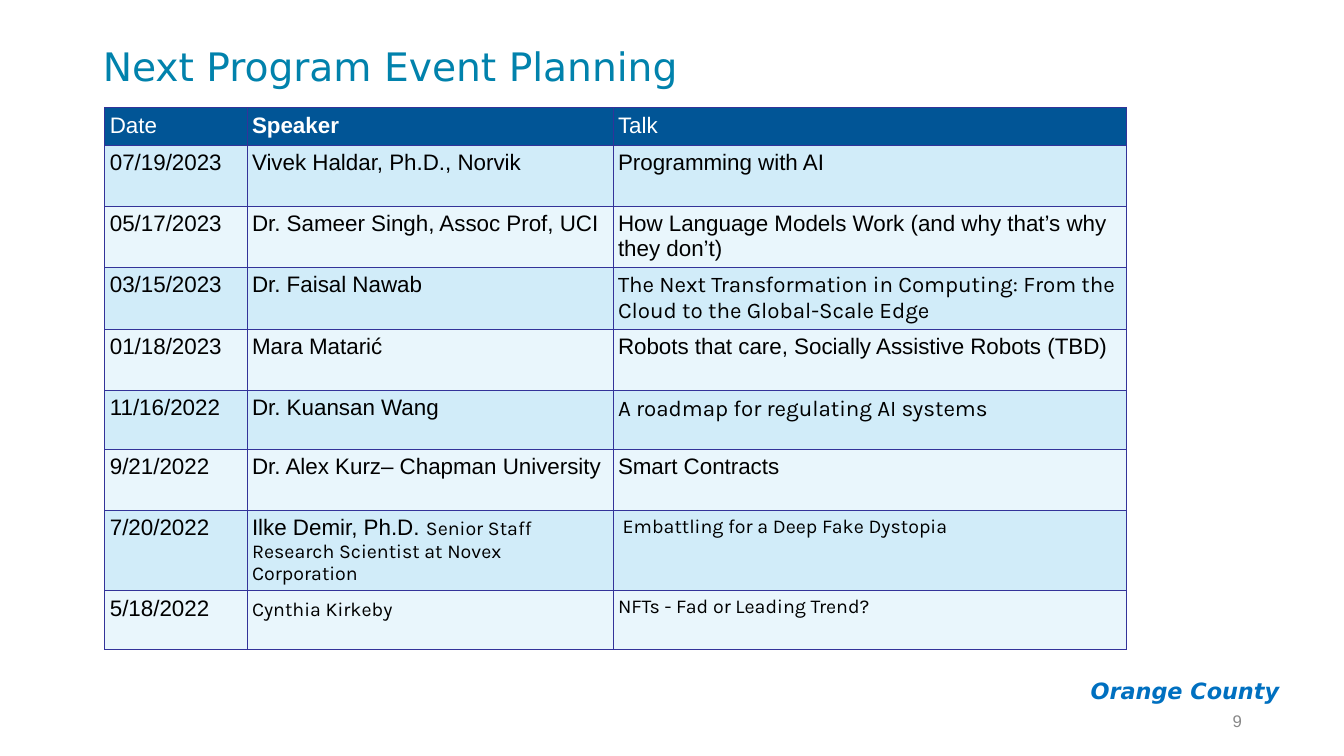
from lxml import etree
from pptx import Presentation
from pptx.dml.color import RGBColor
from pptx.enum.text import MSO_ANCHOR, MSO_AUTO_SIZE, PP_ALIGN
from pptx.oxml.ns import qn
from pptx.util import Inches, Pt

LEFT, RIGHT = PP_ALIGN.LEFT, PP_ALIGN.RIGHT
TOP, MIDDLE = MSO_ANCHOR.TOP, MSO_ANCHOR.MIDDLE
FIXED_SIZE = MSO_AUTO_SIZE.NONE
TITLE_ONLY = 5

TEAL = RGBColor(0x01, 0x82, 0xAC)
BLUE = RGBColor(0x00, 0x70, 0xC0)
NAVY = RGBColor(0x01, 0x55, 0x96)
BORDER = RGBColor(0x33, 0x33, 0x99)
SKY = RGBColor(0xD1, 0xEC, 0xF9)
PALE = RGBColor(0xE9, 0xF6, 0xFC)
GRAY = RGBColor(0x88, 0x88, 0x88)
WHITE = RGBColor(0xFF, 0xFF, 0xFF)
BLACK = RGBColor(0x00, 0x00, 0x00)

HEADING_FONT, BODY_FONT, ACCENT_FONT = "DejaVu Sans", "Arial", "Karla"
KARLA = {"font": ACCENT_FONT}
SMALL_KARLA = {"font": ACCENT_FONT, "size": 14}

# A cell is plain text or a list of (text, format) runs.
HEADER = ["Date", [("Speaker", {"bold": True})], "Talk"]
EVENTS = [
    ["07/19/2023", "Vivek Haldar, Ph.D., Norvik", "Programming with AI"],
    ["05/17/2023", "Dr. Sameer Singh, Assoc Prof, UCI",
     "How Language Models Work (and why that’s why they don’t)"],
    ["03/15/2023", "Dr. Faisal Nawab",
     [("The Next Transformation in Computing: From the Cloud to the Global-Scale Edge", KARLA)]],
    ["01/18/2023", "Mara Matarić", "Robots that care, Socially Assistive Robots (TBD)"],
    ["11/16/2022", "Dr. Kuansan Wang", [("A roadmap for regulating AI systems", KARLA)]],
    ["9/21/2022", "Dr. Alex Kurz– Chapman University", "Smart Contracts"],
    ["7/20/2022",
     [("Ilke Demir, Ph.D. ", {}),
      ("Senior Staff Research Scientist at Novex Corporation", SMALL_KARLA)],
     [(" Embattling for a Deep Fake Dystopia", SMALL_KARLA)]],
    ["5/18/2022", [("Cynthia Kirkeby", SMALL_KARLA), (" ", {})],
     [("NFTs - Fad or Leading Trend?", SMALL_KARLA)]],
]
COLUMN_SHARES = [10.58, 27.23, 38.18]
ROW_SHARES = [4.93, 8.07, 8.07, 8.07, 8.07, 7.73, 8.07, 10.53, 7.73]


def add_run(paragraph, text, font=BODY_FONT, size=16, color=BLACK, bold=False, italic=False):
    run = paragraph.add_run()
    run.text = text
    run.font.name = font
    run.font.size = Pt(size)
    run.font.color.rgb = color
    run.font.bold = bold
    run.font.italic = italic


class SlideBuilder:
    """Places elements by percentages of the slide's width and height."""

    def __init__(self, presentation):
        self.width = presentation.slide_width
        self.height = presentation.slide_height
        self.slide = presentation.slides.add_slide(presentation.slide_layouts[TITLE_ONLY])

    def across(self, share):
        return round(self.width * share / 100)

    def down(self, share):
        return round(self.height * share / 100)

    def box(self, left, top, width, height):
        return self.across(left), self.down(top), self.across(width), self.down(height)

    def title(self, text, *place, **text_format):
        shape = self.slide.shapes.title
        shape.left, shape.top, shape.width, shape.height = self.box(*place)
        paragraph = self.prepare(shape.text_frame, MIDDLE, LEFT)
        paragraph.line_spacing = 0.9
        add_run(paragraph, text, **text_format)

    def label(self, text, *place, anchor=MIDDLE, inset=0.05, **text_format):
        frame = self.slide.shapes.add_textbox(*self.box(*place)).text_frame
        paragraph = self.prepare(frame, anchor, RIGHT)
        frame.margin_top = frame.margin_bottom = Inches(inset)
        add_run(paragraph, text, **text_format)

    def prepare(self, frame, anchor, alignment):
        frame.word_wrap = True
        frame.auto_size = FIXED_SIZE
        frame.vertical_anchor = anchor
        paragraph = frame.paragraphs[0]
        paragraph.alignment = alignment
        return paragraph

    def table(self, rows, left, top):
        place = self.box(left, top, sum(COLUMN_SHARES), sum(ROW_SHARES))
        table = self.slide.shapes.add_table(len(rows), len(COLUMN_SHARES), *place).table
        for column, share in zip(table.columns, COLUMN_SHARES):
            column.width = self.across(share)
        for index, (row, share) in enumerate(zip(table.rows, ROW_SHARES)):
            row.height = self.down(share)
            fill = (SKY if index % 2 else PALE) if index else NAVY
            color = BLACK if index else WHITE
            for cell, content in zip(row.cells, rows[index]):
                self.fill_cell(cell, content, fill, color)

    def fill_cell(self, cell, content, fill, color):
        cell.margin_left = cell.margin_right = Inches(0.05)
        cell.margin_top = cell.margin_bottom = Inches(0.05)
        cell.fill.solid()
        cell.fill.fore_color.rgb = fill
        self.outline_cell(cell)
        runs = [(content, {})] if isinstance(content, str) else content
        for text, text_format in runs:
            add_run(cell.text_frame.paragraphs[0], text, color=color, **text_format)

    def outline_cell(self, cell):
        properties = cell._tc.get_or_add_tcPr()
        for position, side in enumerate(("a:lnL", "a:lnR", "a:lnT", "a:lnB")):
            line = etree.Element(qn(side), w=str(Pt(0.75)))
            solid = etree.SubElement(line, qn("a:solidFill"))
            etree.SubElement(solid, qn("a:srgbClr"), val=str(BORDER))
            properties.insert(position, line)


def main():
    presentation = Presentation()
    presentation.slide_width = Inches(13.33)
    presentation.slide_height = Inches(7.5)
    builder = SlideBuilder(presentation)
    builder.label("Orange County", 78.83, 88.27, 17.1, 6.27, anchor=TOP, inset=0.1,
                  font=HEADING_FONT, color=BLUE, bold=True, italic=True)
    builder.title("Next Program Event Planning", 6.9, 3.87, 86.25, 10.4,
                  font=HEADING_FONT, size=28, color=TEAL)
    builder.label("9", 70.65, 92.67, 22.5, 5.33, size=12, color=GRAY)
    builder.table([HEADER, *EVENTS], 7.8, 14.27)
    presentation.save("out.pptx")


if __name__ == "__main__":
    main()
